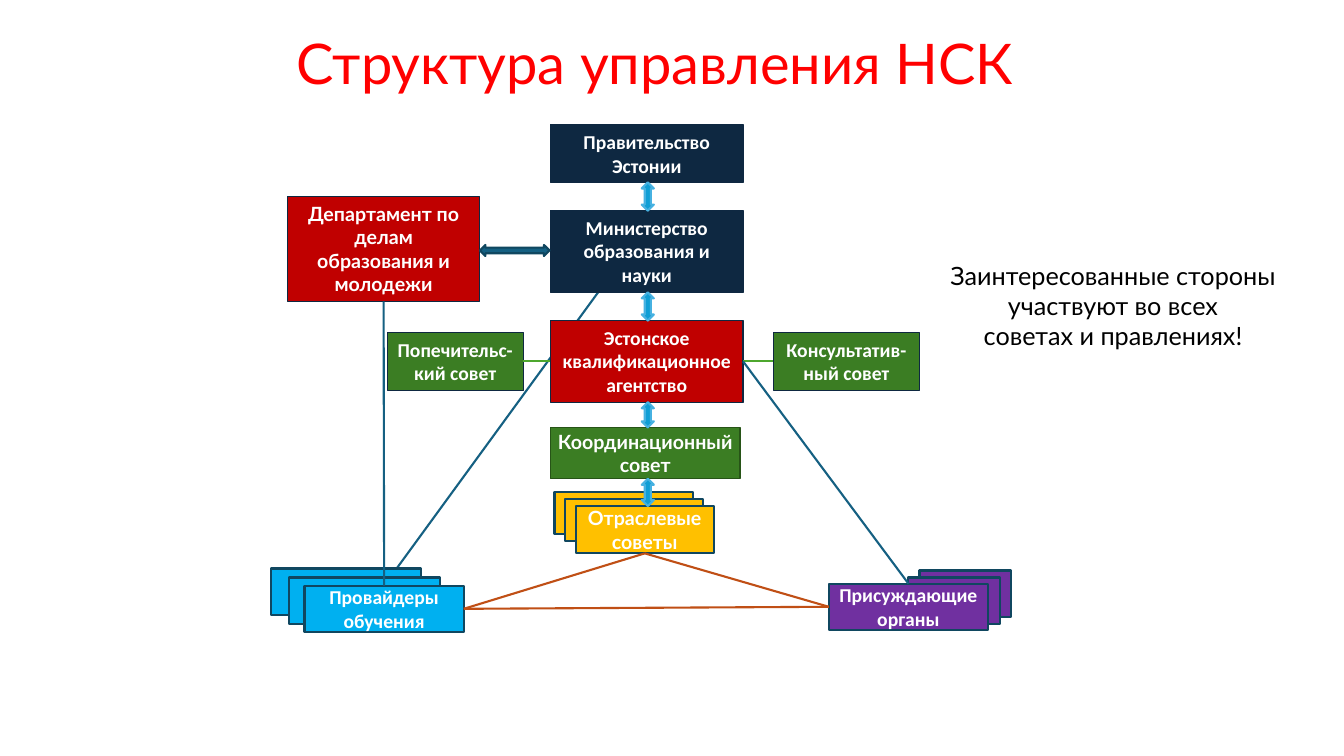
from dataclasses import dataclass

from lxml.etree import SubElement
from pptx import Presentation
from pptx.dml.color import RGBColor
from pptx.enum.shapes import MSO_CONNECTOR, MSO_SHAPE
from pptx.enum.text import MSO_ANCHOR, MSO_AUTO_SIZE, PP_ALIGN
from pptx.oxml.ns import qn
from pptx.util import Inches, Pt

TOP, LEFT, BOTTOM, RIGHT = range(4)


@dataclass(frozen=True)
class Theme:
    title: str = "FF0000"
    ink: str = "000000"
    white: str = "FFFFFF"
    navy: str = "0E2841"
    red: str = "C00000"
    green: str = "3B7D23"
    green_edge: str = "275417"
    green_link: str = "4EA72E"
    amber: str = "FFC000"
    sky: str = "00B0F0"
    violet: str = "7030A0"
    teal: str = "156082"
    teal_edge: str = "104760"
    arrow: str = "0F9ED5"
    arrow_edge: str = "46B1E1"
    orange_link: str = "C04F15"
    title_size: int = 40
    note_size: int = 18
    label_size: int = 14
    thin: float = 0.75
    thick: float = 1.5
    head_font: str = "Lato"
    body_font: str = "Calibri"


THEME = Theme()


@dataclass(frozen=True)
class Box:
    left: float
    top: float
    width: float
    height: float

    def inside(self, left, top, width, height):
        """Return a box placed relative to this one."""
        return Box(self.left + left, self.top + top, width, height)

    def lengths(self):
        return [Inches(n) for n in (self.left, self.top, self.width, self.height)]


def write(shape, text, size, color, font, bold=False):
    frame = shape.text_frame
    frame.text = text
    for para in frame.paragraphs:
        para.alignment = PP_ALIGN.CENTER
        for span in para.runs:
            span.font.size = Pt(size)
            span.font.name = font
            span.font.bold = bold
            span.font.color.rgb = RGBColor.from_string(color)
    return frame


def add_block(page, box, fill, edge, weight, kind=MSO_SHAPE.RECTANGLE):
    shape = page.shapes.add_shape(kind, *box.lengths())
    shape.shadow.inherit = False
    shape.fill.solid()
    shape.fill.fore_color.rgb = RGBColor.from_string(fill)
    shape.line.color.rgb = RGBColor.from_string(edge)
    shape.line.width = Pt(weight)
    return shape


def add_body(page, box, text, fill, font=THEME.body_font):
    """Add a governing body: a thin-edged rectangle that fits its text."""
    shape = add_block(page, box, fill, THEME.navy, THEME.thin)
    frame = write(shape, text, THEME.label_size, THEME.white, font, bold=True)
    frame.vertical_anchor = MSO_ANCHOR.TOP
    frame.auto_size = MSO_AUTO_SIZE.SHAPE_TO_FIT_TEXT
    return shape


def add_stack(page, area, backs, back_size, front, text, fill, font=THEME.body_font):
    """Add overlapping cards, and return the labelled front one."""
    for corner in backs:
        add_block(page, area.inside(*corner, *back_size), fill, THEME.teal_edge, THEME.thick)
    card = add_block(page, area.inside(*front), fill, THEME.teal_edge, THEME.thick)
    write(card, text, THEME.label_size, THEME.white, font, bold=True)
    return card


def add_line(page, color, start=(0, 0), end=(0, 0)):
    points = [Inches(n) for n in (*start, *end)]
    line = page.shapes.add_connector(MSO_CONNECTOR.STRAIGHT, *points)
    line.line.color.rgb = RGBColor.from_string(color)
    line.line.width = Pt(THEME.thick)
    SubElement(line._element.spPr, qn("a:effectLst"))
    return line


def join(page, color, first, first_side, second, second_side):
    line = add_line(page, color)
    line.begin_connect(first, first_side)
    line.end_connect(second, second_side)


def add_title(page, box):
    title = page.shapes.add_textbox(*box.lengths())
    frame = write(title, "Структура управления НСК", THEME.title_size, THEME.title, THEME.head_font)
    frame.word_wrap = True
    frame.vertical_anchor = MSO_ANCHOR.MIDDLE
    frame.paragraphs[0].line_spacing = 0.9


def add_note(page, box):
    note = page.shapes.add_textbox(*box.lengths())
    text = "Заинтересованные стороны\nучаствуют во всех\nсоветах и правлениях!"
    frame = write(note, text, THEME.note_size, THEME.ink, THEME.head_font)
    frame.word_wrap = False
    frame.auto_size = MSO_AUTO_SIZE.SHAPE_TO_FIT_TEXT


def add_hierarchy(page, area):
    """Add the central column with its arrows; return the ministry, agency and sector cards."""
    width = area.width
    government = area.inside(0, 0, width, 0.57)
    ministry = area.inside(0, 0.85, width, 0.81)
    agency = area.inside(0, 1.94, width, 0.81)
    council = area.inside(0, 3, 1.88, 0.51)
    sectors = area.inside(0.25, 3.78, 1.37, 0.47)

    add_body(page, government, "Правительство Эстонии", THEME.navy)
    ministry_body = add_body(page, ministry, "Министерство образования и науки", THEME.navy)
    agency_body = add_body(page, agency, "Эстонское квалификационное агентство", THEME.red)

    council_body = add_block(page, council, THEME.green, THEME.green_edge, THEME.thin)
    frame = write(council_body, "Координационный совет", THEME.label_size, THEME.white,
                  THEME.head_font, bold=True)
    frame.margin_left = frame.margin_right = Inches(0.05)
    sector_cards = add_stack(page, sectors, [(-0.21, -0.14), (-0.11, -0.07)], (1.37, 0.42),
                             (0, 0, 1.37, 0.47), "Отраслевые советы", THEME.amber, THEME.head_font)

    levels = [government, ministry, agency, council, sectors]
    for upper, lower in zip(levels, levels[1:]):
        bottom = upper.top + upper.height
        gap = Box(area.left + width / 2 - 0.05, bottom, 0.12, lower.top - bottom)
        add_block(page, gap, THEME.arrow, THEME.arrow_edge, THEME.thick, MSO_SHAPE.UP_DOWN_ARROW)
    return ministry_body, agency_body, sector_cards


def add_side_councils(page, area, agency):
    trustees = add_body(page, area.inside(0, 0, 1.35, 0.57), "Попечительс-кий совет", THEME.green)
    advisers = add_body(page, area.inside(area.width - 1.45, 0, 1.45, 0.57),
                        "Консультатив-ный совет", THEME.green)
    join(page, THEME.green_link, trustees, RIGHT, agency, LEFT)
    join(page, THEME.green_link, agency, RIGHT, advisers, LEFT)


def add_department(page, area):
    department = add_body(page, area, "Департамент по делам образования и молодежи",
                          THEME.red, THEME.head_font)
    add_block(page, area.inside(area.width, 0.48, 0.69, 0.11), THEME.teal, THEME.teal_edge,
              THEME.thick, MSO_SHAPE.LEFT_RIGHT_ARROW)
    return department


def add_providers(page, area):
    return add_stack(page, area, [(0, 0), (0.18, 0.09)], (1.49, 0.46),
                     (0.33, 0.17, 1.58, 0.46), "Провайдеры обучения", THEME.sky)


def add_awarders(page, area):
    return add_stack(page, area, [(0.9, 0), (0.79, 0.07)], (0.91, 0.46),
                     (0, 0.13, 1.58, 0.46), "Присуждающие органы", THEME.violet)


def main():
    deck = Presentation()
    deck.slide_width, deck.slide_height = Inches(13.33), Inches(7.5)
    page = deck.slides.add_slide(deck.slide_layouts[6])

    ministry_line = add_line(page, THEME.teal, (3.81, 5.81), (5.94, 2.89))
    add_title(page, Box(0.96, 0.48, 11.07, 0.35))
    ministry, agency, sectors = add_hierarchy(page, Box(5.46, 1.24, 1.91, 4.25))
    add_side_councils(page, Box(3.84, 3.3, 5.28, 0.57), agency)
    department = add_department(page, Box(2.85, 1.95, 1.91, 1.04))
    providers = add_providers(page, Box(2.69, 5.64, 1.91, 0.63))
    awarders = add_awarders(page, Box(8.22, 5.66, 1.81, 0.59))

    ministry_line.begin_connect(providers, TOP)
    join(page, THEME.teal, awarders, TOP, agency, RIGHT)
    join(page, THEME.teal, providers, TOP, department, BOTTOM)
    join(page, THEME.orange_link, providers, RIGHT, sectors, BOTTOM)
    join(page, THEME.orange_link, awarders, LEFT, sectors, BOTTOM)
    join(page, THEME.orange_link, providers, RIGHT, awarders, LEFT)
    add_note(page, Box(9.31, 2.53, 3.46, 1.01))
    deck.save("out.pptx")


if __name__ == "__main__":
    main()
